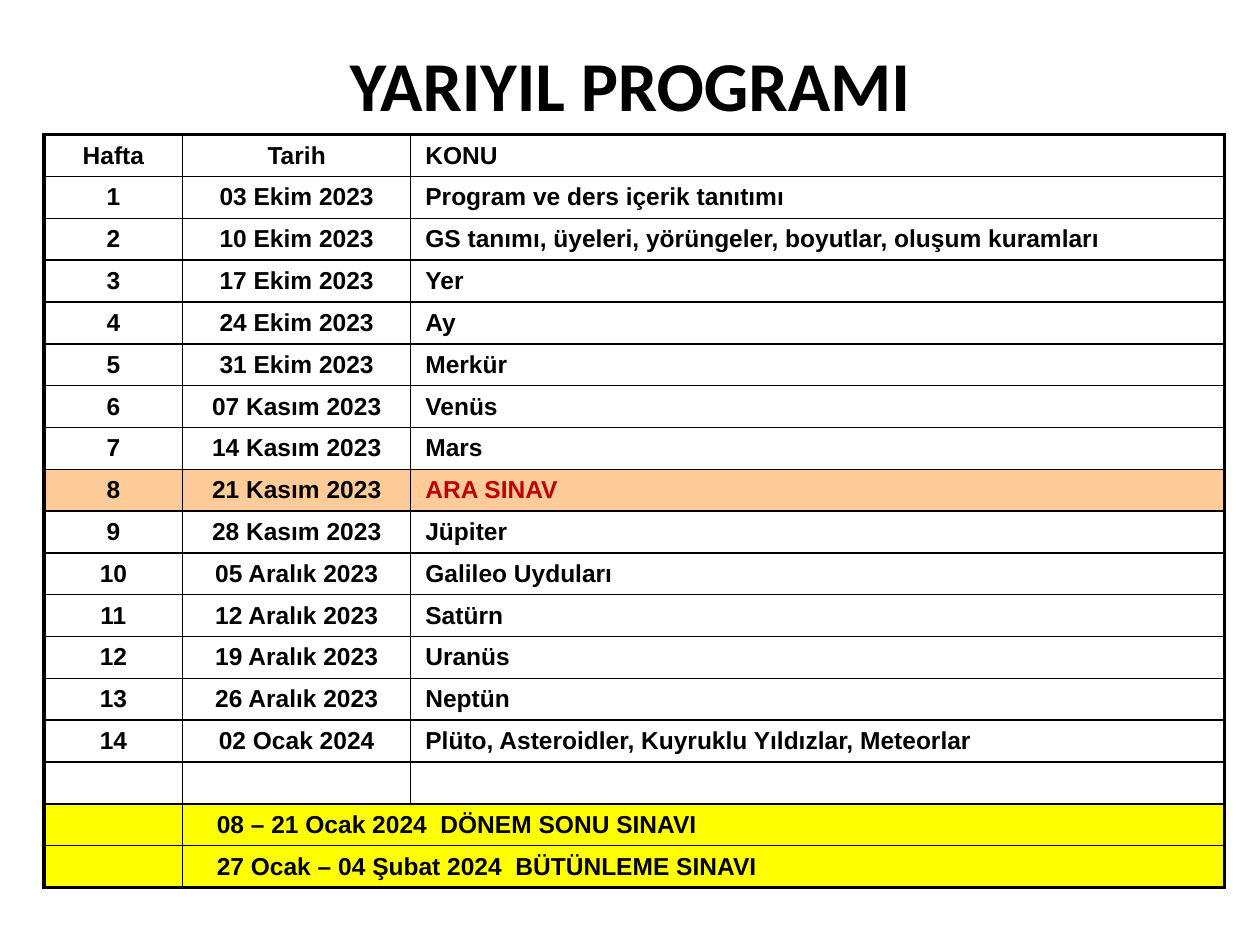
from dataclasses import dataclass

import pptx
import pptx.dml.color
import pptx.enum.text
import pptx.oxml
import pptx.oxml.ns
import pptx.util

Pt = pptx.util.Pt
Align = pptx.enum.text.PP_ALIGN
Anchor = pptx.enum.text.MSO_ANCHOR


@dataclass(frozen=True)
class Theme:
    title_font: str = "Calibri"
    body_font: str = "Arial"
    title_size: float = 40
    body_size: float = 14
    text: str = "000000"
    exam_text: str = "C00000"
    midterm_fill: str = "FFCC99"
    final_fill: str = "FFFF00"
    border: str = "000000"
    outer_border: float = 2.25
    inner_border: float = 1


THEME = Theme()

COLUMN_WIDTHS = [79.2, 130.3, 465.1]
ROW_HEIGHT = 23.92
TOPIC_INDENT = 8.4
FINAL_INDENT = 19.5

HEADER = ("Hafta", "Tarih", "KONU")
WEEKS = [
    ("03 Ekim 2023", "Program ve ders içerik tanıtımı"),
    ("10 Ekim 2023", "GS tanımı, üyeleri, yörüngeler, boyutlar, oluşum kuramları"),
    ("17 Ekim 2023", "Yer"),
    ("24 Ekim 2023", "Ay"),
    ("31 Ekim 2023", "Merkür"),
    ("07 Kasım 2023", "Venüs"),
    ("14 Kasım 2023", "Mars"),
    ("21 Kasım 2023", "ARA SINAV"),
    ("28 Kasım 2023", "Jüpiter"),
    ("05 Aralık 2023", "Galileo Uyduları"),
    ("12 Aralık 2023", "Satürn"),
    ("19 Aralık 2023", "Uranüs"),
    ("26 Aralık 2023", "Neptün"),
    ("02 Ocak 2024", "Plüto, Asteroidler, Kuyruklu Yıldızlar, Meteorlar"),
]
MIDTERM_WEEK = 8
FINAL_EXAMS = [
    "08 – 21 Ocak 2024  DÖNEM SONU SINAVI",
    "27 Ocak – 04 Şubat 2024  BÜTÜNLEME SINAVI",
]


def write_text(text_frame, text, font, size, color, alignment):
    text_frame.text = text
    paragraph = text_frame.paragraphs[0]
    paragraph.alignment = alignment
    for run in paragraph.runs:
        run.font.name = font
        run.font.size = Pt(size)
        run.font.bold = True
        run.font.color.rgb = pptx.dml.color.RGBColor.from_string(color)


def add_title(slide, text):
    shape = slide.shapes.add_textbox(Pt(99.4), Pt(20.2), Pt(521.3), Pt(55.4))
    shape.text_frame.word_wrap = True
    write_text(shape.text_frame, text, THEME.title_font, THEME.title_size,
               THEME.text, Align.CENTER)


def fill_cell(cell, text="", color=THEME.text, fill=None, indent=None):
    """Cells with an indent are left-aligned, the others centred."""
    cell.vertical_anchor = Anchor.MIDDLE
    cell.margin_top = cell.margin_right = cell.margin_bottom = 0
    cell.margin_left = Pt(indent or 0)
    alignment = Align.CENTER if indent is None else Align.LEFT
    write_text(cell.text_frame, text, THEME.body_font, THEME.body_size, color, alignment)
    if fill:
        cell.fill.solid()
        cell.fill.fore_color.rgb = pptx.dml.color.RGBColor.from_string(fill)
    else:
        cell.fill.background()


def set_borders(cell, outer_sides):
    properties = cell._tc.get_or_add_tcPr()
    for index, side in enumerate("LRTB"):
        width = THEME.outer_border if side in outer_sides else THEME.inner_border
        properties.insert(index, pptx.oxml.parse_xml(
            f'<a:ln{side} {pptx.oxml.ns.nsdecls("a")} w="{int(Pt(width))}">'
            f'<a:solidFill><a:srgbClr val="{THEME.border}"/></a:solidFill></a:ln{side}>'))


def fill_row(table, row, values, fill=None, topic_color=THEME.text):
    week, date, topic = values
    fill_cell(table.cell(row, 0), week, fill=fill)
    fill_cell(table.cell(row, 1), date, fill=fill)
    fill_cell(table.cell(row, 2), topic, topic_color, fill, TOPIC_INDENT)


def frame_table(table):
    last_row = len(table.rows) - 1
    last_column = len(table.columns) - 1
    for row in range(last_row + 1):
        for column in range(last_column + 1):
            cell = table.cell(row, column)
            if cell.is_spanned:
                continue
            right_edge = column + cell.span_width - 1 if cell.is_merge_origin else column
            sides = {"L": column == 0, "R": right_edge == last_column,
                     "T": row == 0, "B": row == last_row}
            set_borders(cell, [side for side, outer in sides.items() if outer])


def add_schedule(slide):
    blank_row = len(WEEKS) + 1
    row_count = blank_row + 1 + len(FINAL_EXAMS)
    table = slide.shapes.add_table(
        row_count, len(COLUMN_WIDTHS), Pt(25.2), Pt(77),
        Pt(sum(COLUMN_WIDTHS)), Pt(ROW_HEIGHT * row_count)).table
    table.first_row = table.horz_banding = False
    for column, width in zip(table.columns, COLUMN_WIDTHS):
        column.width = Pt(width)
    for row in table.rows:
        row.height = Pt(ROW_HEIGHT)

    # Header and weekly topics
    fill_row(table, 0, HEADER)
    for week, (date, topic) in enumerate(WEEKS, start=1):
        values = (str(week), date, topic)
        if week == MIDTERM_WEEK:
            fill_row(table, week, values, THEME.midterm_fill, THEME.exam_text)
        else:
            fill_row(table, week, values)
    fill_row(table, blank_row, ("", "", ""))

    # Final exams span the date and topic columns
    for row, exam in enumerate(FINAL_EXAMS, start=blank_row + 1):
        fill_cell(table.cell(row, 0), fill=THEME.final_fill)
        table.cell(row, 1).merge(table.cell(row, 2))
        fill_cell(table.cell(row, 1), exam, fill=THEME.final_fill, indent=FINAL_INDENT)

    frame_table(table)


def main():
    presentation = pptx.Presentation()
    presentation.slide_width = Pt(720)
    presentation.slide_height = Pt(540)
    slide = presentation.slides.add_slide(presentation.slide_layouts[6])
    add_title(slide, "YARIYIL PROGRAMI")
    add_schedule(slide)
    presentation.save("out.pptx")


if __name__ == "__main__":
    main()
